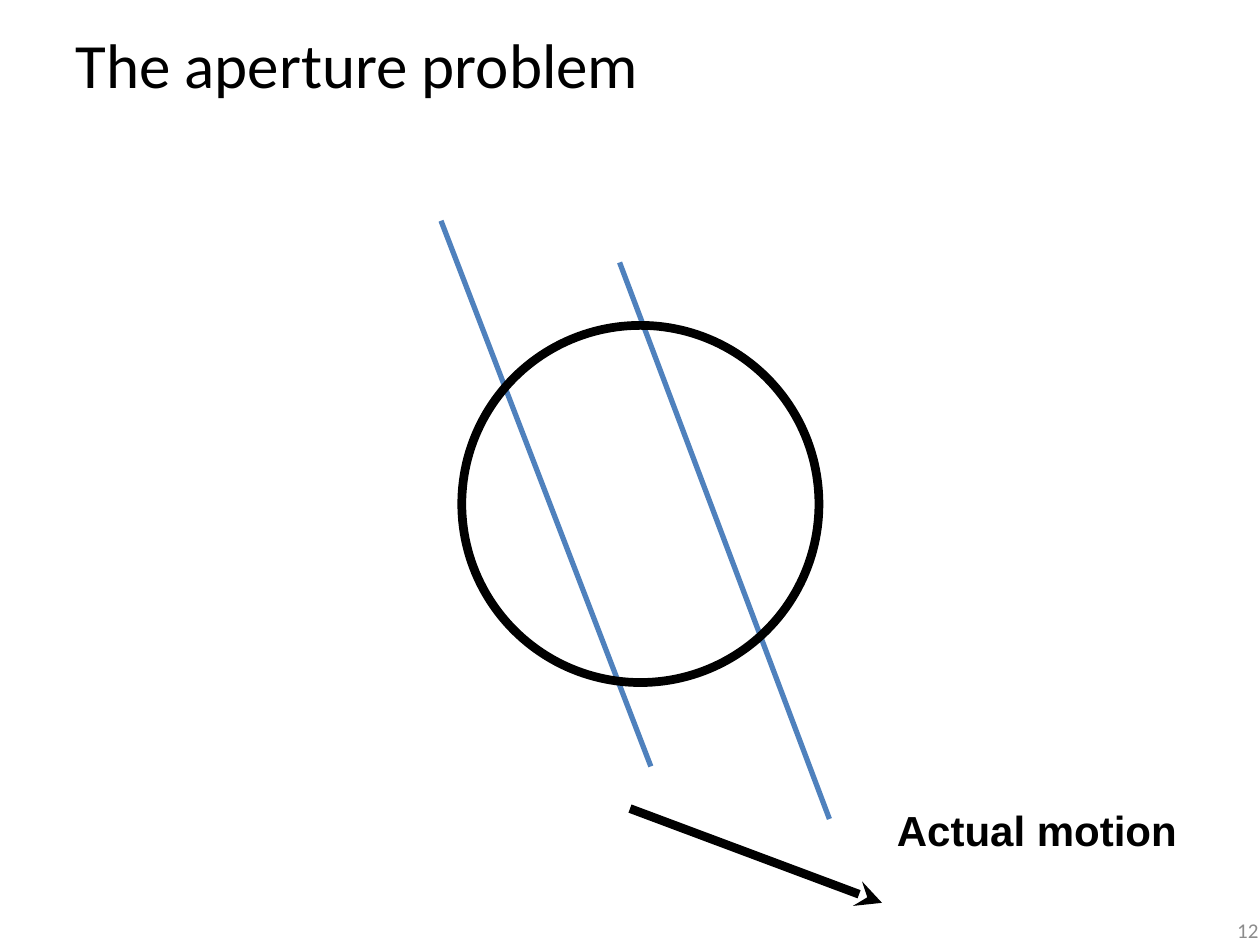
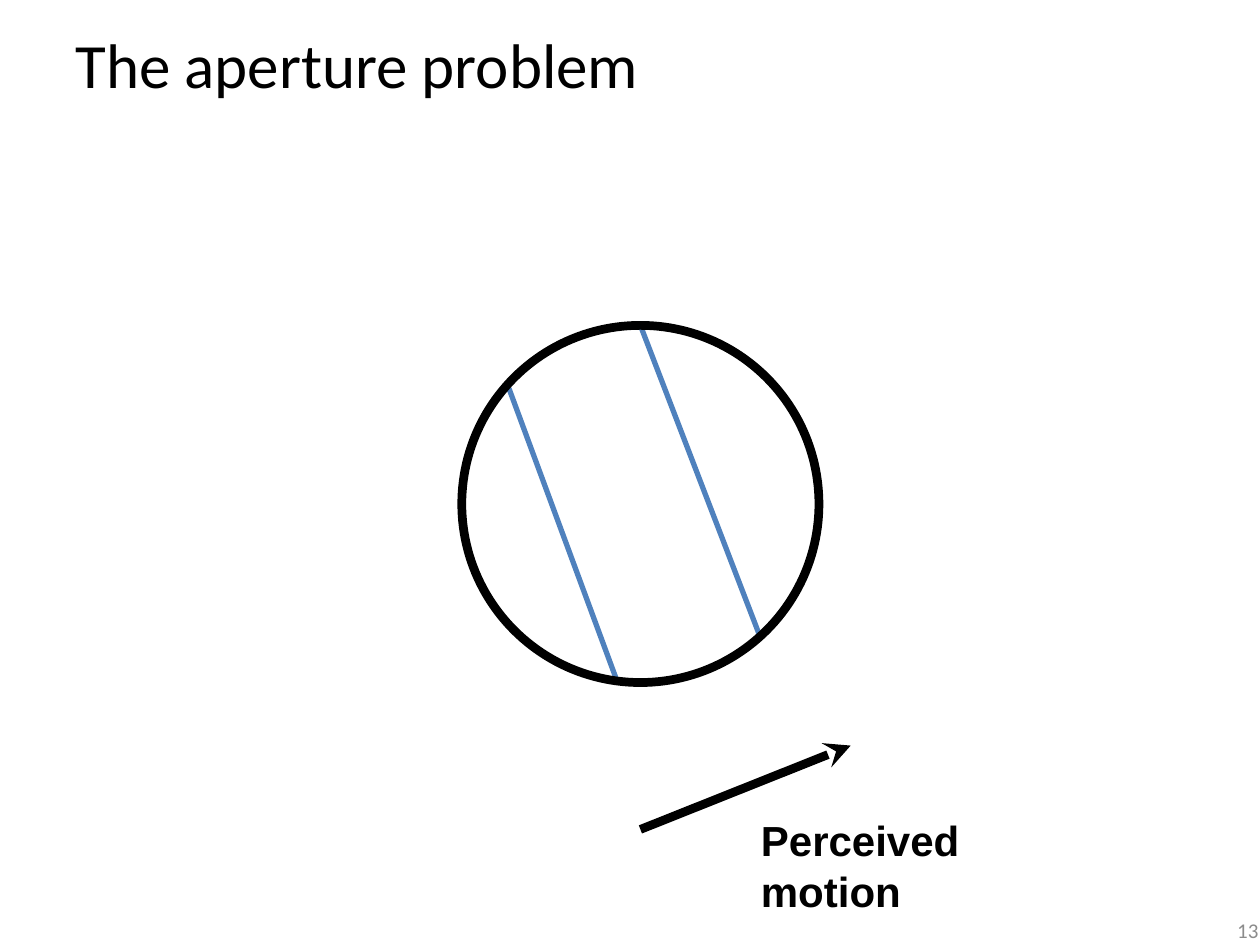
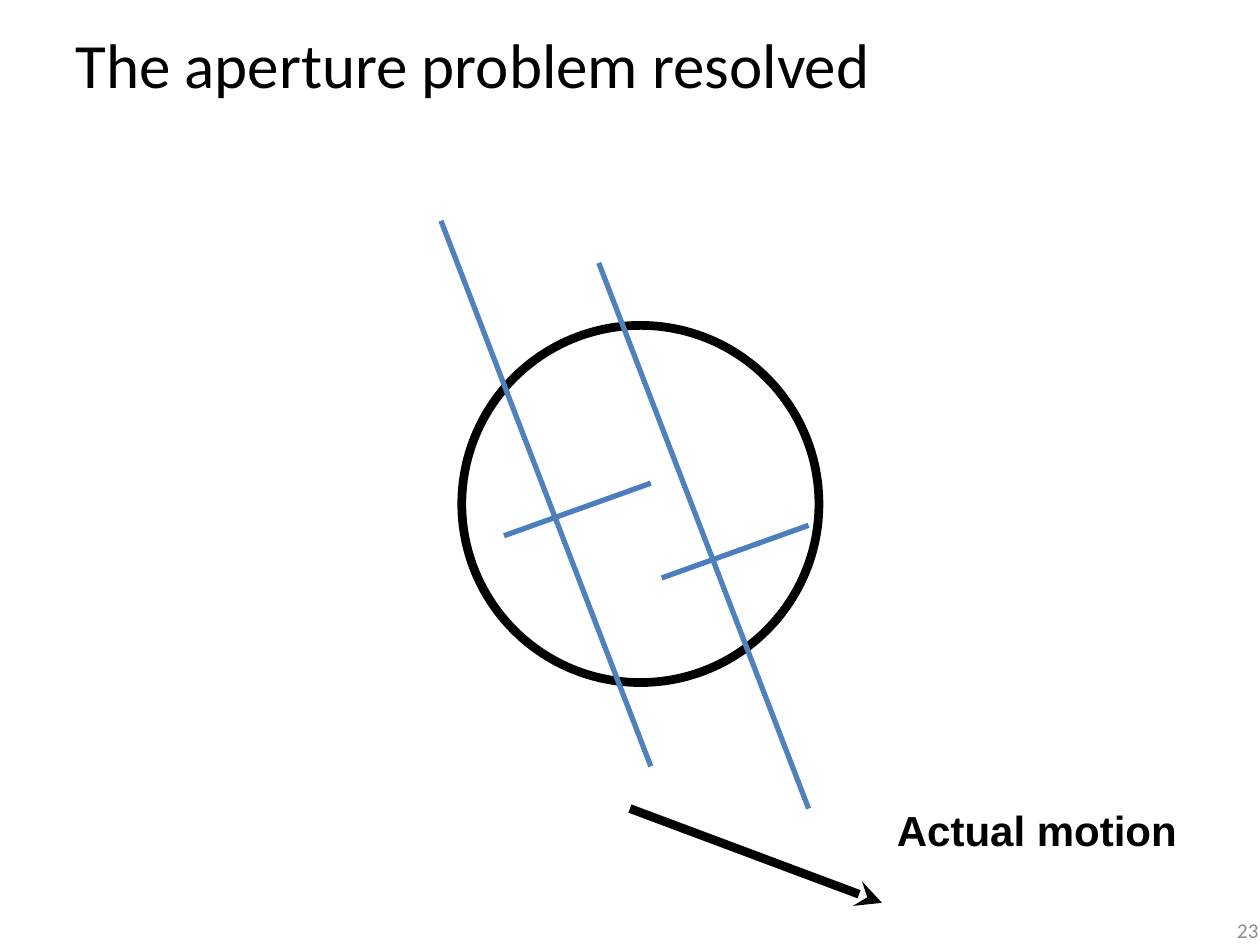
from lxml.etree import SubElement
from pptx import Presentation
from pptx.dml.color import RGBColor
from pptx.enum.shapes import MSO_CONNECTOR as Connector, MSO_SHAPE as Shape
from pptx.enum.text import MSO_ANCHOR as Anchor, PP_ALIGN as Align
from pptx.oxml.ns import qn
from pptx.util import Cm, Pt

BLACK, GREY = "000000", "8C8C8C"
BAR_BLUE, CROSS_BLUE = "4F81BD", "4B7EBC"

# Points are (x, y) in centimetres.
LEFT_BAR = ((8.89, 4.45), (13.12, 15.45))
CROSSBAR = ((10.16, 10.8), (13.12, 9.74))
BAR_SPACING = (3.18, 0.85)


def color(hex_string):
    return RGBColor.from_string(hex_string)


def shifted(line, offset):
    return [(x + offset[0], y + offset[1]) for x, y in line]


class ApertureDeck:
    """Holds the shared style and the slide being drawn."""

    def __init__(self):
        self.presentation = Presentation()
        self.presentation.slide_width = Cm(25.4)
        self.presentation.slide_height = Cm(19.05)
        self.slide = None

    def new_slide(self, title, number):
        blank = self.presentation.slide_layouts[6]
        self.slide = self.presentation.slides.add_slide(blank)
        self.text(title, (1.27, 0, 22.86, 2.54), 36, anchor=Anchor.MIDDLE)
        self.text(str(number), (19.69, 18.24, 5.93, 1.02), 12, ink=GREY,
                  anchor=Anchor.MIDDLE, align=Align.RIGHT)

    def text(self, words, box, size, name="Calibri", ink=BLACK, bold=False,
             anchor=Anchor.TOP, align=Align.LEFT):
        frame = self.slide.shapes.add_textbox(*map(Cm, box)).text_frame
        frame.word_wrap = True
        frame.vertical_anchor = anchor
        paragraph = frame.paragraphs[0]
        paragraph.text = words
        paragraph.alignment = align
        font = paragraph.font
        font.name, font.size, font.bold = name, Pt(size), bold
        font.color.rgb = color(ink)

    def line(self, ends, ink=BAR_BLUE, width=3, group=None):
        shapes = (group or self.slide).shapes
        (x1, y1), (x2, y2) = ends
        connector = shapes.add_connector(
            Connector.STRAIGHT, Cm(x1), Cm(y1), Cm(x2), Cm(y2))
        connector.line.color.rgb = color(ink)
        connector.line.width = Pt(width)
        SubElement(connector._element.spPr, qn("a:effectLst"))
        return connector

    def crossed_bar(self, offset=(0, 0)):
        group = self.slide.shapes.add_group_shape()
        self.line(shifted(LEFT_BAR, offset), group=group)
        self.line(shifted(CROSSBAR, offset), CROSS_BLUE, group=group)

    def aperture(self):
        circle = self.slide.shapes.add_shape(
            Shape.OVAL, Cm(9.31), Cm(6.56), Cm(7.2), Cm(7.2))
        circle.shadow.inherit = False
        circle.fill.background()
        circle.line.color.rgb = color(BLACK)
        circle.line.width = Pt(5)

    def motion(self, label, label_box, arrow):
        connector = self.line(arrow, BLACK, 5)
        outline = connector._element.spPr.find(qn("a:ln"))
        SubElement(outline, qn("a:tailEnd"), type="stealth")
        self.text(label, label_box, 24, "Arial", bold=True)

    def actual_motion(self):
        self.motion("Actual motion", (17.83, 16.09, 6.25, 1.27),
                    ((12.7, 16.3), (17.78, 18.2)))

    def perceived_motion(self):
        self.motion("Perceived motion", (15.09, 16.3, 7.16, 1.27),
                    ((12.91, 16.72), (17.15, 15.03)))


def main():
    deck = ApertureDeck()

    deck.new_slide("The aperture problem", 12)
    deck.line(LEFT_BAR)
    deck.line(((12.49, 5.29), (16.72, 16.51)))
    deck.aperture()
    deck.actual_motion()

    deck.new_slide("The aperture problem", 13)
    deck.line(((10.26, 7.83), (12.45, 13.76)))
    deck.line(((12.91, 6.56), (15.32, 12.83)))
    deck.aperture()
    deck.perceived_motion()

    deck.new_slide("The aperture problem resolved", 23)
    deck.aperture()
    deck.actual_motion()
    deck.crossed_bar()
    deck.crossed_bar(BAR_SPACING)

    deck.presentation.save("out.pptx")


if __name__ == "__main__":
    main()
